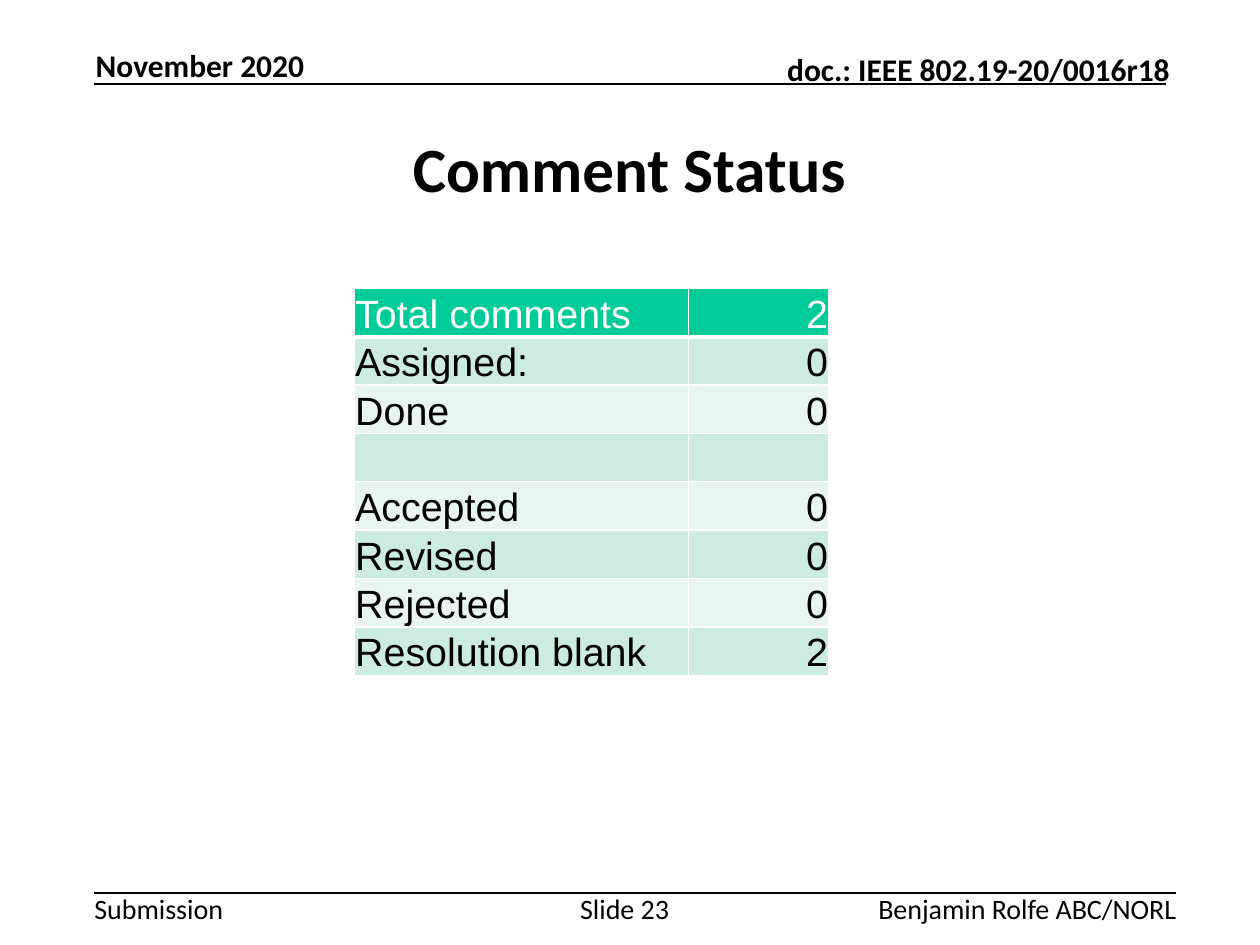
from dataclasses import dataclass

from lxml import etree
from pptx import Presentation
from pptx.dml.color import RGBColor
from pptx.enum.shapes import MSO_CONNECTOR
from pptx.enum.text import MSO_ANCHOR, PP_ALIGN
from pptx.oxml.ns import qn
from pptx.util import Cm, Pt

LEFT, CENTER, RIGHT = PP_ALIGN.LEFT, PP_ALIGN.CENTER, PP_ALIGN.RIGHT
TOP, MIDDLE, BOTTOM = MSO_ANCHOR.TOP, MSO_ANCHOR.MIDDLE, MSO_ANCHOR.BOTTOM
STRAIGHT = MSO_CONNECTOR.STRAIGHT

BLACK = RGBColor(0x00, 0x00, 0x00)
WHITE = RGBColor(0xFF, 0xFF, 0xFF)
GREEN = RGBColor(0x00, 0xCC, 0x99)
MINT = RGBColor(0xCC, 0xEC, 0xDE)
PALE = RGBColor(0xE7, 0xF6, 0xEF)


@dataclass
class Label:
    text: str
    left: float
    top: float
    width: float
    height: float
    size: float
    align: PP_ALIGN = LEFT
    anchor: MSO_ANCHOR = TOP
    bold: bool = False
    wrap: bool = True


@dataclass
class Rule:
    left: float
    right: float
    y: float


LABELS = [
    Label("Submission", 2.03, 19.18, 2.84, 0.74, 17.1, wrap=False),
    Label("doc.: IEEE 802.19-20/0016r18", 14.81, 1.07, 10.36, 0.81, 19.2,
          RIGHT, BOTTOM, True),
    Label("Slide 23", 12.42, 19.18, 2.03, 1.07, 17.1, CENTER),
    Label("Benjamin Rolfe ABC/NORL", 15.88, 19.18, 9.42, 0.69, 17.1, RIGHT),
    Label("November 2020", 2.06, 0.99, 5.56, 0.81, 19.2, LEFT, BOTTOM, True),
]
RULES = [Rule(2.03, 25.07, 1.8), Rule(2.03, 25.3, 19.2)]
ROWS = [
    ("Total comments", "2"),
    ("Assigned:", "0"),
    ("Done", "0"),
    ("", ""),
    ("Accepted", "0"),
    ("Revised", "0"),
    ("Rejected", "0"),
    ("Resolution blank", "2"),
]
WIDTHS = (7.19, 3.02)
HEIGHT = 1.04


def style(par, size: float, font: str, color: RGBColor, align: PP_ALIGN,
          bold: bool = False) -> None:
    par.alignment = align
    par.font.size = Pt(size)
    for run in par.runs:
        run.font.size = Pt(size)
        run.font.name = font
        run.font.bold = bold
        run.font.color.rgb = color


def add_label(slide, item: Label) -> None:
    box = slide.shapes.add_textbox(Cm(item.left), Cm(item.top),
                                   Cm(item.width), Cm(item.height))
    frame = box.text_frame
    frame.margin_left = frame.margin_right = 0
    frame.margin_top = frame.margin_bottom = 0
    frame.word_wrap = item.wrap
    frame.vertical_anchor = item.anchor
    frame.text = item.text
    style(frame.paragraphs[0], item.size, "Calibri", BLACK, item.align,
          item.bold)


def add_rule(slide, rule: Rule) -> None:
    line = slide.shapes.add_connector(STRAIGHT, Cm(rule.left), Cm(rule.y),
                                      Cm(rule.right), Cm(rule.y))
    line.line.color.rgb = BLACK
    line.line.width = Pt(1)
    etree.SubElement(line._element.spPr, qn("a:effectLst"))


def add_edge(cell, side: str, width: float) -> None:
    edge = etree.SubElement(cell._tc.get_or_add_tcPr(), qn("a:ln" + side),
                            w=str(Pt(width)))
    fill = etree.SubElement(edge, qn("a:solidFill"))
    etree.SubElement(fill, qn("a:srgbClr"), val=str(WHITE))


def fill_cell(cell, text: str, row: int, col: int) -> None:
    # Borders come before the fill; the header has a thick lower edge
    thick = {(0, "B"), (1, "T")}
    for side in "LRTB":
        add_edge(cell, side, 3 if (row, side) in thick else 1)
    cell.fill.solid()
    cell.fill.fore_color.rgb = GREEN if row == 0 else MINT if row % 2 else PALE
    cell.margin_left = cell.margin_right = cell.margin_top = Cm(0.02)
    cell.margin_bottom = 0
    cell.vertical_anchor = BOTTOM
    cell.text_frame.text = text
    style(cell.text_frame.paragraphs[0], 24, "Arial",
          BLACK if row else WHITE, RIGHT if col else LEFT)


def add_grid(slide) -> None:
    frame = slide.shapes.add_table(len(ROWS), len(WIDTHS), Cm(7.62), Cm(6.2),
                                   Cm(sum(WIDTHS)), Cm(HEIGHT * len(ROWS)))
    grid = frame.table
    for col, width in enumerate(WIDTHS):
        grid.columns[col].width = Cm(width)
    for row, texts in enumerate(ROWS):
        grid.rows[row].height = Cm(HEIGHT)
        for col, text in enumerate(texts):
            fill_cell(grid.cell(row, col), text, row, col)


def add_title(slide, text: str) -> None:
    title = slide.shapes.title
    title.left, title.top = Cm(2.03), Cm(2.03)
    title.width, title.height = Cm(23.01), Cm(3.15)
    title.text_frame.text = text
    title.text_frame.vertical_anchor = MIDDLE
    style(title.text_frame.paragraphs[0], 38.4, "Calibri", BLACK, CENTER, True)


def main() -> None:
    deck = Presentation()
    deck.slide_width, deck.slide_height = Cm(27.1), Cm(20.32)
    slide = deck.slides.add_slide(deck.slide_layouts[5])

    # Header and footer
    for rule in RULES:
        add_rule(slide, rule)
    for item in LABELS:
        add_label(slide, item)

    # Title and table
    add_title(slide, "Comment Status")
    add_grid(slide)

    deck.save("out.pptx")


if __name__ == "__main__":
    main()
